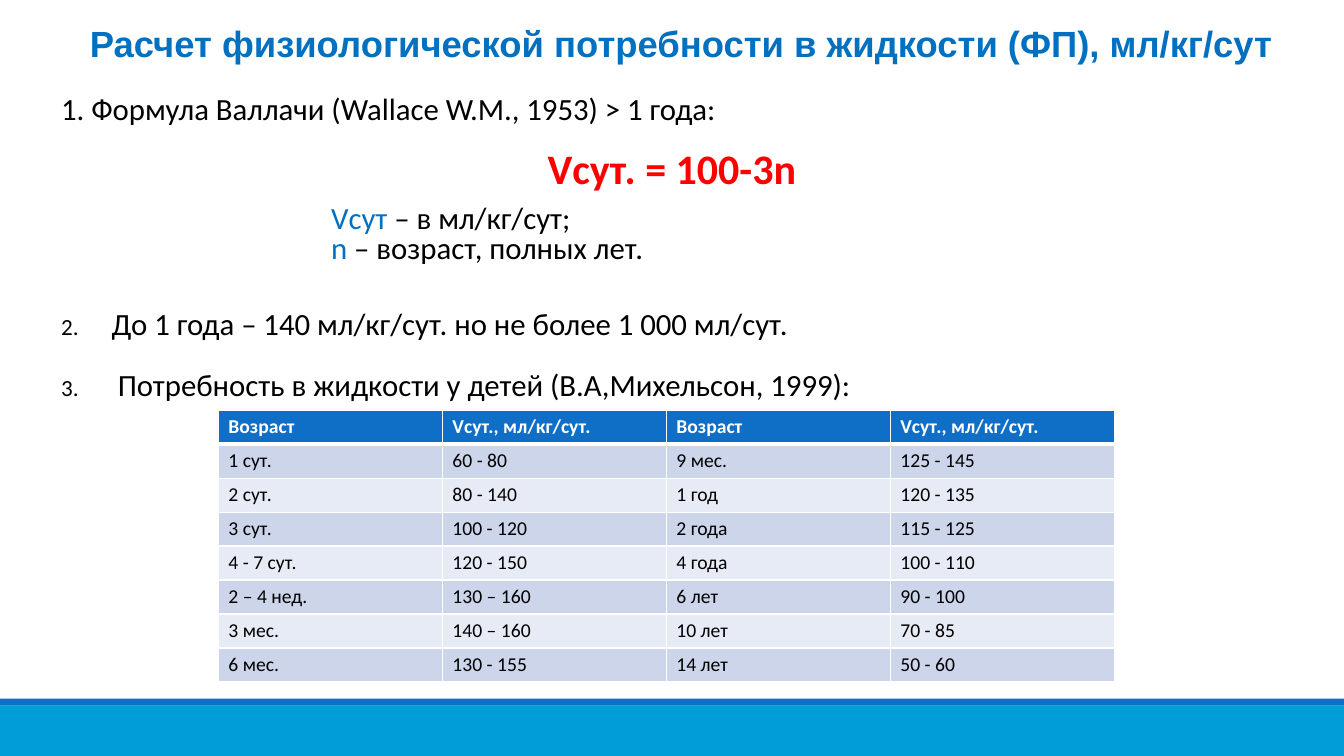
from lxml import etree
from pptx import Presentation
from pptx.dml.color import RGBColor
from pptx.enum.shapes import MSO_SHAPE
from pptx.enum.text import MSO_ANCHOR, MSO_AUTO_SIZE, PP_ALIGN
from pptx.oxml.ns import qn
from pptx.util import Pt

RECT = MSO_SHAPE.RECTANGLE
TOP, MIDDLE = MSO_ANCHOR.TOP, MSO_ANCHOR.MIDDLE
NO_FIT = MSO_AUTO_SIZE.NONE
LEFT, CENTER, JUSTIFY = PP_ALIGN.LEFT, PP_ALIGN.CENTER, PP_ALIGN.JUSTIFY

COLORS = {
    "title": "0070C0", "text": "000000", "formula": "FF0000", "white": "FFFFFF",
    "header": "0F6FC6", "footer": "009DD9", "odd": "CCD5EA", "even": "E7EBF5",
}


class SlideBuilder:
    """Holds the text style and the current slide; lengths are in points."""

    font = "Calibri"
    size = 22

    def __init__(self, s):
        self.s = s

    def place(self, sp, box):
        for name, value in zip(("left", "top", "width", "height"), box):
            setattr(sp, name, Pt(value))

    def frame(self, sp, anchor=TOP):
        tf = sp.text_frame
        for name, value in {"word_wrap": True, "auto_size": NO_FIT,
                            "vertical_anchor": anchor}.items():
            setattr(tf, name, value)
        return tf

    def add_runs(self, p, runs, size=None, bold=False, font=None, **para):
        """Fill a paragraph with (text, colour) runs."""
        fmt = {"alignment": LEFT, "line_spacing": 1.0, "space_before": Pt(0), **para}
        for name, value in fmt.items():
            setattr(p, name, value)
        for text, color in runs:
            r = p.add_run()
            r.text = text
            for name, value in {"name": font or self.font, "bold": bold,
                                "size": Pt(size or self.size)}.items():
                setattr(r.font, name, value)
            r.font.color.rgb = RGBColor.from_string(COLORS[color])

    def title(self, text, box):
        sp = self.s.shapes.title
        self.place(sp, box)
        self.add_runs(self.frame(sp, MIDDLE).paragraphs[0], [(text, "title")], size=26,
                      bold=True, font="Arial", alignment=CENTER, line_spacing=0.9)

    def text(self, box, lines, **fmt):
        tf = self.frame(self.s.shapes.add_textbox(*map(Pt, box)))
        for i, runs in enumerate(lines):
            p = tf.add_paragraph() if i else tf.paragraphs[0]
            self.add_runs(p, runs, **fmt)

    def numbered_list(self, box, items, start, gap):
        """Fill the body placeholder with (text, indent) items."""
        sp = self.s.placeholders[1]
        self.place(sp, box)
        tf = self.frame(sp)
        for i, (text, indent) in enumerate(items):
            p = tf.add_paragraph() if i else tf.paragraphs[0]
            self.add_runs(p, [(text, "text")], alignment=JUSTIFY,
                          space_before=Pt(gap if i else 0))
            pPr = p._p.get_or_add_pPr()
            pPr.set("marL", str(Pt(indent)))
            pPr.set("indent", str(-Pt(indent)))
            clr = etree.SubElement(pPr, qn("a:buClr"))
            etree.SubElement(clr, qn("a:srgbClr"), val=COLORS["text"])
            etree.SubElement(pPr, qn("a:buSzPct"), val="75000")
            etree.SubElement(pPr, qn("a:buFont"), typeface=self.font)
            etree.SubElement(pPr, qn("a:buAutoNum"), type="arabicPeriod",
                             startAt=str(start + i))

    def bar(self, box, color):
        sp = self.s.shapes.add_shape(RECT, *map(Pt, box))
        sp.shadow.inherit = False
        sp.fill.solid()
        sp.fill.fore_color.rgb = RGBColor.from_string(COLORS[color])
        sp.line.fill.background()

    def borders(self, cell, **widths):
        tcPr = cell._tc.get_or_add_tcPr()
        for side in "LRTB":
            ln = etree.SubElement(tcPr, qn(f"a:ln{side}"), w=str(Pt(widths.get(side, 1))))
            fill = etree.SubElement(ln, qn("a:solidFill"))
            etree.SubElement(fill, qn("a:srgbClr"), val=COLORS["white"])

    def table(self, box, rows):
        table = self.s.shapes.add_table(len(rows), len(rows[0]), *map(Pt, box)).table
        for i, row in enumerate(rows):
            table.rows[i].height = Pt(box[3] / len(rows))
            head = i == 0
            fill = "header" if head else "odd" if i % 2 else "even"
            for j, value in enumerate(row):
                cell = table.cell(i, j)
                self.add_runs(cell.text_frame.paragraphs[0],
                              [(value, "white" if head else "text")], size=14, bold=head)
                # Thick rule under the header row
                self.borders(cell, T=3 if i == 1 else 1, B=3 if head else 1)
                cell.fill.solid()
                cell.fill.fore_color.rgb = RGBColor.from_string(COLORS[fill])


NORMS = [
    ("Возраст", "Vсут., мл/кг/сут.", "Возраст", "Vсут., мл/кг/сут."),
    ("1 сут.", "60 - 80", "9 мес.", "125 - 145"),
    ("2 сут.", "80 - 140", "1 год", "120 - 135"),
    ("3 сут.", "100 - 120", "2 года", "115 - 125"),
    ("4 - 7 сут.", "120 - 150", "4 года", "100 - 110"),
    ("2 – 4 нед.", "130 – 160", "6 лет", "90 - 100"),
    ("3 мес.", "140 – 160", "10 лет", "70 - 85"),
    ("6 мес.", "130 - 155", "14 лет", "50 - 60"),
]


def main():
    prs = Presentation()
    prs.slide_width, prs.slide_height = Pt(960), Pt(540)
    b = SlideBuilder(prs.slides.add_slide(prs.slide_layouts[1]))

    # Footer bars
    b.bar((0, 504, 960, 36), "footer")
    b.bar((0, 499, 960, 5), "header")

    # Title
    b.title("Расчет физиологической потребности в жидкости (ФП), мл/кг/сут",
            (36.5, 10, 901, 45.5))

    # Formula and its legend
    b.text((36.5, 60.5, 879, 32),
           [[("1. Формула Валлачи (Wallace W.M., 1953) > 1 года:", "text")]],
           alignment=JUSTIFY)
    b.text((156, 98, 648, 41), [[("Vсут. = 100-3n", "formula")]],
           size=30, bold=True, alignment=CENTER)
    b.text((229.5, 143.5, 498, 50),
           [[("Vсут ", "title"), ("– в мл/кг/сут;", "text")],
            [("n", "title"), (" – возраст, полных лет.", "text")]],
           line_spacing=0.8)

    # Remaining rules
    b.numbered_list((36.5, 214, 673, 79),
                    [("До 1 года – 140 мл/кг/сут. но не более 1 000 мл/сут.", 36),
                     ("Потребность в жидкости у детей (В.А,Михельсон, 1999):", 40.5)],
                    start=2, gap=17)

    # Fluid needs by age
    b.table((156, 293, 640, 192), NORMS)
    prs.save("out.pptx")


if __name__ == "__main__":
    main()
